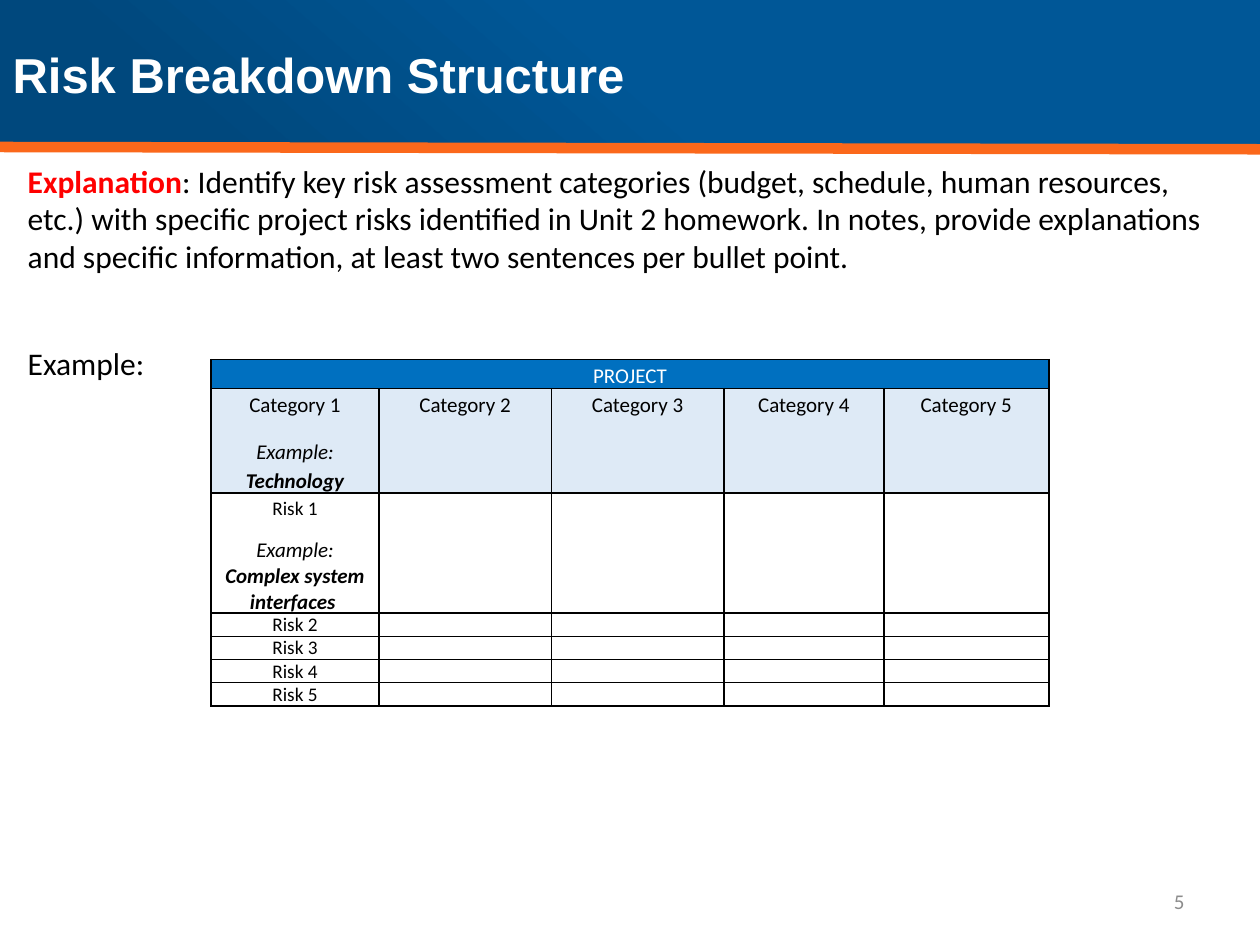
from lxml.etree import SubElement
from pptx import Presentation
from pptx.dml.color import RGBColor
from pptx.enum.shapes import MSO_CONNECTOR as Link, MSO_SHAPE as Shape
from pptx.enum.text import MSO_ANCHOR as Anchor, PP_ALIGN as Align
from pptx.oxml.ns import qn
from pptx.util import Pt

WIDE, HIGH = 720, 540


def tone(code):
    return RGBColor.from_string(code)


class Deck:
    face, ink = "Calibri", "000000"

    def __init__(self):
        self.show = Presentation()
        self.show.slide_width, self.show.slide_height = Pt(WIDE), Pt(HIGH)
        self.slide = self.show.slides.add_slide(self.show.slide_layouts[5])
        self.shapes = self.slide.shapes

    def run(self, para, text, size, color=None, bold=False, slant=False, face=None):
        run = para.add_run()
        run.text = text
        font = run.font
        font.name, font.size = face or self.face, Pt(size)
        font.bold, font.italic = bold, slant
        font.color.rgb = tone(color or self.ink)

    def title(self, text, *box):
        title = self.shapes.title
        title.left, title.top, title.width, title.height = map(Pt, box)
        frame = title.text_frame
        frame.vertical_anchor = Anchor.MIDDLE
        para = frame.paragraphs[0]
        para.alignment = Align.LEFT
        self.run(para, text, 28, "FFFFFF", bold=True, face="Arial")

    def band(self, *box):
        band = self.shapes.add_shape(Shape.RECTANGLE, *map(Pt, box))
        band.shadow.inherit = False
        band.line.fill.background()
        band.fill.gradient()
        band.fill.gradient_angle = 229
        stops = zip(band.fill.gradient_stops, (0.49, 0.85), ("005797", "00487D"))
        for stop, place, color in stops:
            stop.position = place
            stop.color.rgb = tone(color)
        # The title sits in front of the band
        tree = band.element.getparent()
        tree.remove(band.element)
        tree.insert(2, band.element)

    def rule(self, *ends):
        rule = self.shapes.add_connector(Link.STRAIGHT, *map(Pt, ends))
        rule.line.color.rgb = tone("FB681B")
        rule.line.width = Pt(6)
        SubElement(rule.element.spPr, qn("a:effectLst"))

    def text(self, paras, *box, size, align=Align.LEFT, anchor=Anchor.TOP, gap=0):
        """Each paragraph is a list of (text, style) runs."""
        frame = self.shapes.add_textbox(*map(Pt, box)).text_frame
        frame.word_wrap = True
        frame.vertical_anchor = anchor
        for i, runs in enumerate(paras):
            para = frame.add_paragraph() if i else frame.paragraphs[0]
            para.alignment = align
            if i:
                para.space_before = Pt(gap)
            for text, style in runs:
                self.run(para, text, size, **style)

    def cell(self, cell, paras=(), fill=None):
        """Each paragraph is (line spacing, [(text, size, style), ...])."""
        cell.margin_left = cell.margin_right = Pt(5)
        cell.margin_top = cell.margin_bottom = 0
        props = cell._tc.get_or_add_tcPr()
        for side in ("lnL", "lnR", "lnT", "lnB"):
            edge = SubElement(props, qn("a:" + side), w=str(Pt(1)))
            SubElement(SubElement(edge, qn("a:solidFill")), qn("a:srgbClr"), val=self.ink)
        if fill:
            cell.fill.solid()
            cell.fill.fore_color.rgb = tone(fill)
        else:
            cell.fill.background()
        frame = cell.text_frame
        for i, (lead, runs) in enumerate(paras):
            para = frame.add_paragraph() if i else frame.paragraphs[0]
            para.alignment = Align.CENTER
            para.line_spacing = lead
            para.space_after = Pt(10 if lead > 1 else 0)
            for text, size, style in runs:
                self.run(para, text, size, **style)
        if not paras:
            # Keeps an empty cell from stretching its row
            SubElement(frame.paragraphs[0]._p, qn("a:endParaRPr"), sz="1100")

    def table(self, rows, fills, widths, heights, left, top):
        size = len(rows), len(widths)
        box = left, top, sum(widths), sum(heights)
        table = self.shapes.add_table(*size, *map(Pt, box)).table
        table.first_row = table.horz_banding = False
        for col, width in zip(table.columns, widths):
            col.width = Pt(width)
        for r, (row, height) in enumerate(zip(rows, heights)):
            table.rows[r].height = Pt(height)
            for c in range(len(widths)):
                self.cell(table.cell(r, c), row[c] if c < len(row) else (), fills.get(r))
        return table


def main():
    deck = Deck()
    deck.band(0, 0, WIDE, 82.3)
    deck.rule(0, 84, WIDE, 85.3)
    deck.title("Risk Breakdown Structure", 0, 0, 546, 84.2)
    deck.text([[("5", {"color": "8C8C8C"})]], 516, 500.5, 168, 28.8,
              size=12, align=Align.RIGHT, anchor=Anchor.MIDDLE)
    deck.text([
        [("Explanation", {"color": "FF0000", "bold": True}),
         (": Identify key risk assessment categories (budget, schedule, human "
          "resources, etc.) with specific project risks identified in Unit 2 "
          "homework. In notes, provide explanations and specific information, "
          "at least two sentences per bullet point.", {})],
        [("Example:", {})],
    ], 8.8, 88.8, 698, 134.6, size=18, gap=39.5)

    def sample(text):
        return [("Example: ", 12, {"slant": True}),
                (text, 12, {"slant": True, "bold": True})]

    heads = [[(1.15, [(f"Category {n}", 12, {})])] for n in range(1, 6)]
    heads[0].append((1.15, sample("Technology")))
    risks = [[[(1.15 if n == 1 else 1, [(f"Risk {n}", 11, {})])]] for n in range(1, 6)]
    risks[0][0].append((1, sample("Complex system interfaces ")))
    project = [[(1.15, [("PROJECT", 12, {"color": "FFFFFF"})])]]
    grid = deck.table([project, heads, *risks], {0: "0070C0", 1: "DEEAF6"},
                      [95.8, 98.6, 98.6, 91.4, 94.3],
                      [16.3, 59.7, 68.6] + [13.2] * 4, 120.7, 205.5)
    grid.cell(0, 0).merge(grid.cell(0, 4))
    deck.show.save("out.pptx")


if __name__ == "__main__":
    main()
